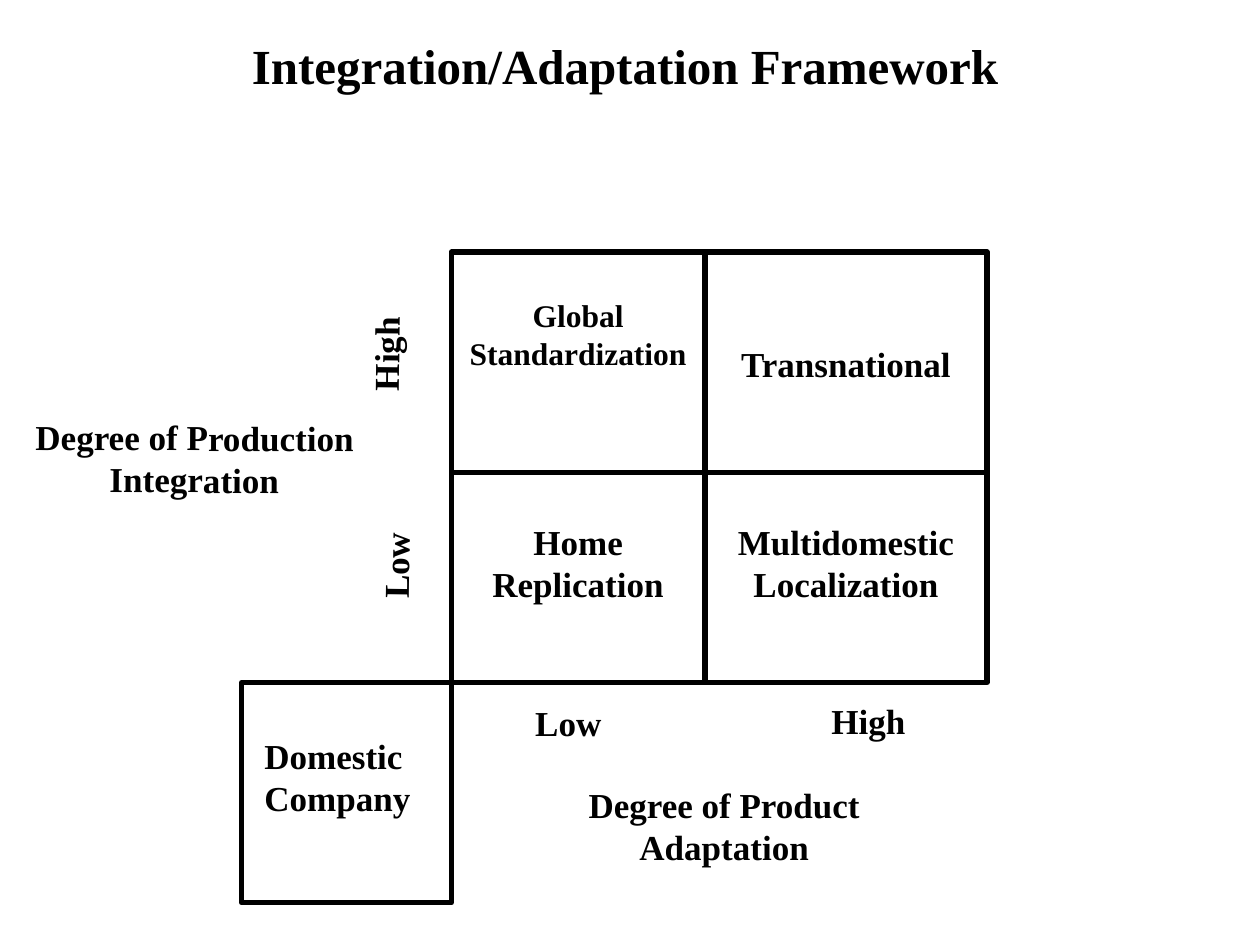
"""Build the integration and adaptation framework slide."""
from dataclasses import dataclass
from typing import Any

from lxml.etree import SubElement
from pptx import Presentation
from pptx.dml.color import RGBColor
from pptx.enum.shapes import MSO_CONNECTOR, MSO_SHAPE
from pptx.enum.text import MSO_ANCHOR, MSO_AUTO_SIZE, PP_ALIGN
from pptx.oxml.ns import qn
from pptx.util import Cm, Pt

BLACK = RGBColor(0x00, 0x00, 0x00)
WHITE = RGBColor(0xFF, 0xFF, 0xFF)
FONT = "Times New Roman"
RULE = Pt(3)
COLS = (9.1, 14.21, 19.9)
ROWS = (5.08, 9.53, 13.76)


@dataclass(frozen=True)
class Cell:
    col: int
    row: int
    text: str
    drop: float
    size: int = 20


@dataclass(frozen=True)
class Label:
    lines: tuple[str, ...]
    left: float
    top: float
    width: float
    height: float
    align: PP_ALIGN = PP_ALIGN.LEFT
    turn: float = 0
    wrap: bool = True


CELLS = (
    Cell(1, 1, "Multidomestic Localization", 0.97),
    Cell(0, 1, "Home Replication", 0.97),
    Cell(1, 0, "Transnational", 1.82),
    Cell(0, 0, "Global Standardization", 0.89, 18),
)
LABELS = (
    Label(("Domestic", "Company"), 5.08, 14.68, 3.81, 1.96),
    Label(("Degree of Product Adaptation",), 10.37, 15.67, 8.46, 3, PP_ALIGN.CENTER),
    Label(("Degree of Production Integration",), 0.42, 8.26, 7, 1.96,
          PP_ALIGN.CENTER, 0.3),
    Label(("Low",), 10.54, 14.02, 1.85, 1.09, wrap=False),
    Label(("High",), 16.51, 13.97, 2.01, 1.09, wrap=False),
    Label(("Low",), 7.04, 10.85, 1.85, 1.09, turn=270.8),
    Label(("High",), 6.76, 6.58, 2.01, 1.09, turn=270.5),
)


def write(frame: Any, lines: tuple[str, ...], size: int, align: PP_ALIGN) -> None:
    """Fill a text frame with one bold run per paragraph."""
    for i, line in enumerate(lines):
        para = frame.add_paragraph() if i else frame.paragraphs[0]
        para.alignment = align
        run = para.add_run()
        run.text = line
        run.font.name = FONT
        run.font.size = Pt(size)
        run.font.bold = True
        run.font.color.rgb = BLACK


def add_box(shapes: Any, left: float, top: float, right: float, low: float) -> Any:
    """Add a black-edged rectangle between two corners."""
    box = shapes.add_shape(MSO_SHAPE.RECTANGLE, Cm(left), Cm(top),
                           Cm(right - left), Cm(low - top))
    box.shadow.inherit = False
    box.line.color.rgb = BLACK
    box.line.width = RULE
    return box


def add_cell(shapes: Any, cell: Cell) -> None:
    """Add one quadrant with its text set down from the top."""
    box = add_box(shapes, COLS[cell.col], ROWS[cell.row],
                  COLS[cell.col + 1], ROWS[cell.row + 1])
    box.fill.solid()
    box.fill.fore_color.rgb = WHITE
    frame = box.text_frame
    frame.word_wrap = True
    frame.vertical_anchor = MSO_ANCHOR.TOP
    frame.margin_top = Cm(cell.drop)
    write(frame, (cell.text,), cell.size, PP_ALIGN.CENTER)


def add_rule(shapes: Any, left: float, top: float, right: float, low: float) -> None:
    """Add one straight grid line."""
    rule = shapes.add_connector(MSO_CONNECTOR.STRAIGHT, Cm(left), Cm(top),
                                Cm(right), Cm(low))
    rule.line.color.rgb = BLACK
    rule.line.width = RULE
    SubElement(rule._element.spPr, qn("a:effectLst"))


def add_label(shapes: Any, label: Label) -> None:
    """Add one free label."""
    box = shapes.add_textbox(Cm(label.left), Cm(label.top),
                             Cm(label.width), Cm(label.height))
    box.rotation = label.turn
    box.text_frame.word_wrap = label.wrap
    box.text_frame.auto_size = MSO_AUTO_SIZE.SHAPE_TO_FIT_TEXT
    write(box.text_frame, label.lines, 20, label.align)


def add_title(title: Any, text: str) -> None:
    """Place and fill the title placeholder."""
    title.left, title.top = Cm(3.6), Cm(0.58)
    title.width, title.height = Cm(18), Cm(1.45)
    title.text_frame.vertical_anchor = MSO_ANCHOR.TOP
    title.text_frame.auto_size = MSO_AUTO_SIZE.NONE
    write(title.text_frame, (text,), 28, PP_ALIGN.CENTER)


def main() -> None:
    """Draw the slide and save it."""
    deck = Presentation()
    deck.slide_width, deck.slide_height = Cm(25.4), Cm(19.05)
    slide = deck.slides.add_slide(deck.slide_layouts[5])
    shapes = slide.shapes
    add_title(shapes.title, "Integration/Adaptation Framework")
    grid = shapes.add_group_shape().shapes
    for cell in CELLS:
        add_cell(grid, cell)
    for row in ROWS:
        add_rule(grid, COLS[0], row, COLS[-1], row)
    for col in COLS:
        add_rule(grid, col, ROWS[0], col, ROWS[-1])
    home = add_box(shapes, 4.87, ROWS[-1], COLS[0], 18.2)
    home.fill.background()
    for label in LABELS:
        add_label(shapes, label)
    deck.save("out.pptx")


if __name__ == "__main__":
    main()
